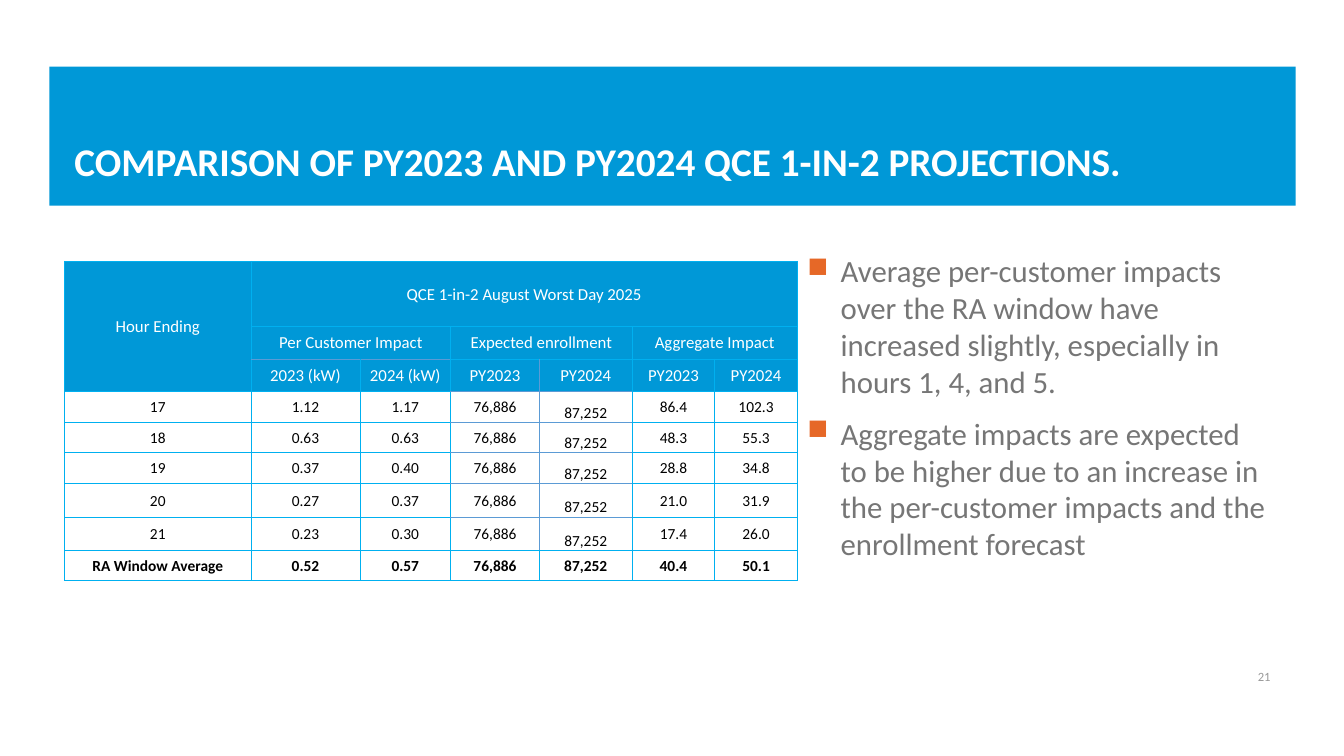
from lxml import etree
from pptx import Presentation
from pptx.dml.color import RGBColor
from pptx.enum.shapes import MSO_SHAPE
from pptx.enum.text import MSO_ANCHOR, PP_ALIGN
from pptx.oxml.ns import qn
from pptx.util import Inches, Pt

BLUE = RGBColor(0x00, 0x98, 0xD7)
SKY = RGBColor(0x00, 0xB0, 0xF0)
STEEL = RGBColor(0x5B, 0x9B, 0xD5)
ORANGE = RGBColor(0xE6, 0x68, 0x27)
GREY = RGBColor(0x76, 0x76, 0x76)
PALE = RGBColor(0x99, 0x99, 0x99)
WHITE = RGBColor(0xFF, 0xFF, 0xFF)
BLACK = RGBColor(0x00, 0x00, 0x00)

COLS = [1.85, 1.08, 0.9, 0.88, 0.92, 0.82, 0.82]
ROWS = [0.65, 0.32, 0.32, 0.31, 0.3, 0.31, 0.33, 0.33, 0.3]
HEADS = 3
LAST = len(ROWS) - 1
CELLS = [
    ["Hour Ending", "QCE 1-in-2 August Worst Day 2025", "", "", "", "", ""],
    ["", "Per Customer Impact", "", "Expected enrollment", "", "Aggregate Impact", ""],
    ["", "2023 (kW)", "2024 (kW)", "PY2023", "PY2024", "PY2023", "PY2024"],
    ["17", "1.12", "1.17", "76,886", "87,252", "86.4", "102.3"],
    ["18", "0.63", "0.63", "76,886", "87,252", "48.3", "55.3"],
    ["19", "0.37", "0.40", "76,886", "87,252", "28.8", "34.8"],
    ["20", "0.27", "0.37", "76,886", "87,252", "21.0", "31.9"],
    ["21", "0.23", "0.30", "76,886", "87,252", "17.4", "26.0"],
    ["RA Window Average", "0.52", "0.57", "76,886", "87,252", "40.4", "50.1"],
]
SPANS = [(0, 0, 2, 0), (0, 1, 0, 6), (1, 1, 1, 2), (1, 3, 1, 4), (1, 5, 1, 6)]
POINTS = [
    "Average per-customer impacts over the RA window have increased slightly, "
    "especially in hours 1, 4, and 5.",
    "Aggregate impacts are expected to be higher due to an increase in the "
    "per-customer impacts and the enrollment forecast",
]


def write(para, words, size=12, color=BLACK, bold=False, align=PP_ALIGN.LEFT):
    """Put formatted text in a paragraph."""
    para.alignment = align
    run = para.add_run()
    run.text = words
    font = run.font
    font.name, font.size, font.bold = "Calibri", Pt(size), bold
    font.color.rgb = color


def add_box(slide, left, top, width, height, anchor=MSO_ANCHOR.TOP):
    """Add a wrapping text box and return its frame."""
    box = slide.shapes.add_textbox(
        Inches(left), Inches(top), Inches(width), Inches(height))
    frame = box.text_frame
    frame.word_wrap = True
    frame.vertical_anchor = anchor
    return frame


def add_band(slide):
    """Add the blue title band."""
    band = slide.shapes.add_shape(
        MSO_SHAPE.RECTANGLE, Inches(0.49), Inches(0.66), Inches(12.36), Inches(1.38))
    band.shadow.inherit = False
    band.fill.solid()
    band.fill.fore_color.rgb = BLUE
    band.line.fill.background()


def add_mark(para):
    """Give a paragraph a hanging orange square."""
    props = para._p.get_or_add_pPr()
    props.set("marL", str(Inches(0.33)))
    props.set("indent", str(-Inches(0.33)))
    tint = etree.SubElement(props, qn("a:buClr"))
    etree.SubElement(tint, qn("a:srgbClr"), val=str(ORANGE))
    etree.SubElement(props, qn("a:buSzPct"), val="92000")
    etree.SubElement(props, qn("a:buChar"), char="■")


def add_list(slide):
    """Add the bulleted findings."""
    frame = add_box(slide, 7.91, 2.45, 4.79, 4.25)
    for i, point in enumerate(POINTS):
        para = frame.paragraphs[0] if i == 0 else frame.add_paragraph()
        add_mark(para)
        para.space_before = Pt(4.4 if i else 0)
        para.space_after = Pt(6)
        write(para, point, size=22, color=GREY)


def row_edge(edge, col):
    """Return the colour of a horizontal edge."""
    steel = (edge == 2 and col in (1, 2)) or (HEADS <= edge < LAST and col in (3, 4))
    return STEEL if steel else SKY


def col_edge(edge, row):
    """Return the colour of a vertical edge."""
    return STEEL if edge == 4 and 2 <= row < LAST else SKY


def add_edges(cell, row, col):
    """Draw the four borders of a cell."""
    props = cell._tc.get_or_add_tcPr()
    edges = {"a:lnL": col_edge(col, row), "a:lnR": col_edge(col + 1, row),
             "a:lnT": row_edge(row, col), "a:lnB": row_edge(row + 1, col)}
    for i, (tag, color) in enumerate(edges.items()):
        line = etree.Element(qn(tag), w=str(Pt(0.5)))
        fill = etree.SubElement(line, qn("a:solidFill"))
        etree.SubElement(fill, qn("a:srgbClr"), val=str(color))
        props.insert(i, line)


def fill_cell(cell, row, col):
    """Set the text, fill and borders of a cell."""
    head = row < HEADS
    cell.margin_left = cell.margin_right = cell.margin_top = Inches(0.01)
    cell.margin_bottom = 0
    low = col == 4 and HEADS <= row < LAST
    cell.vertical_anchor = MSO_ANCHOR.BOTTOM if low else MSO_ANCHOR.MIDDLE
    if head:
        cell.fill.solid()
        cell.fill.fore_color.rgb = BLUE
    else:
        cell.fill.background()
    add_edges(cell, row, col)
    if CELLS[row][col]:
        write(cell.text_frame.paragraphs[0], CELLS[row][col], size=12 if head else 11,
              color=WHITE if head else BLACK, bold=row == LAST, align=PP_ALIGN.CENTER)


def add_grid(slide):
    """Add the table of projections."""
    grid = slide.shapes.add_table(
        len(ROWS), len(COLS), Inches(0.64), Inches(2.59),
        Inches(sum(COLS)), Inches(sum(ROWS))).table
    for col, width in zip(grid.columns, COLS):
        col.width = Inches(width)
    for row, height in zip(grid.rows, ROWS):
        row.height = Inches(height)
    for top, left, end, right in SPANS:
        grid.cell(top, left).merge(grid.cell(end, right))
    for row in range(len(ROWS)):
        for col in range(len(COLS)):
            fill_cell(grid.cell(row, col), row, col)


def main():
    """Build the slide and save it."""
    deck = Presentation()
    deck.slide_width, deck.slide_height = Inches(13.33), Inches(7.5)
    slide = deck.slides.add_slide(deck.slide_layouts[6])
    add_band(slide)
    title = add_box(slide, 0.64, 0.8, 12.06, 1.08, MSO_ANCHOR.BOTTOM)
    write(title.paragraphs[0], "COMPARISON OF PY2023 AND PY2024 QCE 1-IN-2 PROJECTIONS.",
          size=28, color=WHITE, bold=True)
    add_list(slide)
    number = add_box(slide, 11.55, 6.51, 1.15, 0.4, MSO_ANCHOR.MIDDLE)
    write(number.paragraphs[0], "21", size=9, color=PALE, align=PP_ALIGN.RIGHT)
    add_grid(slide)
    deck.save("out.pptx")


if __name__ == "__main__":
    main()
